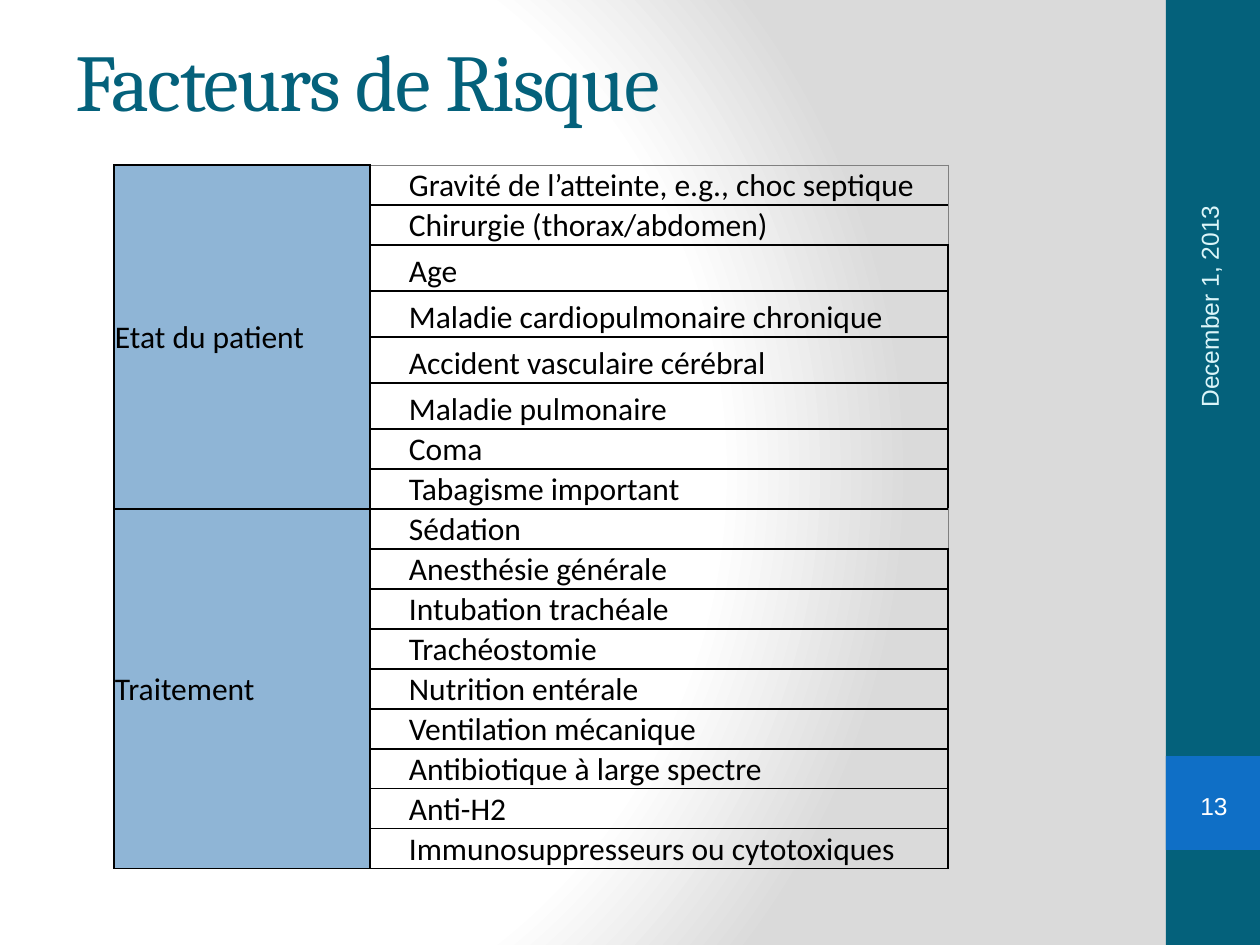
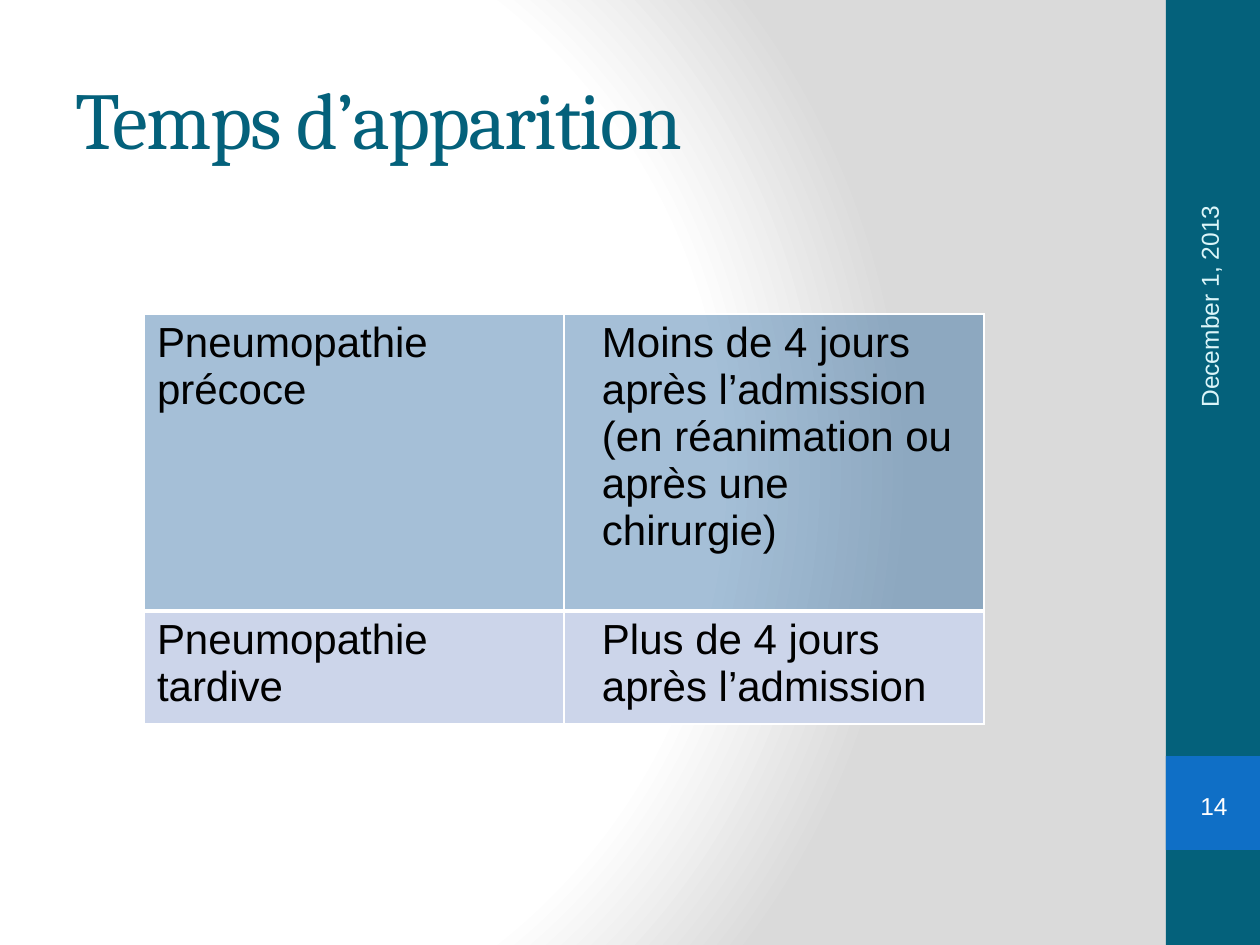
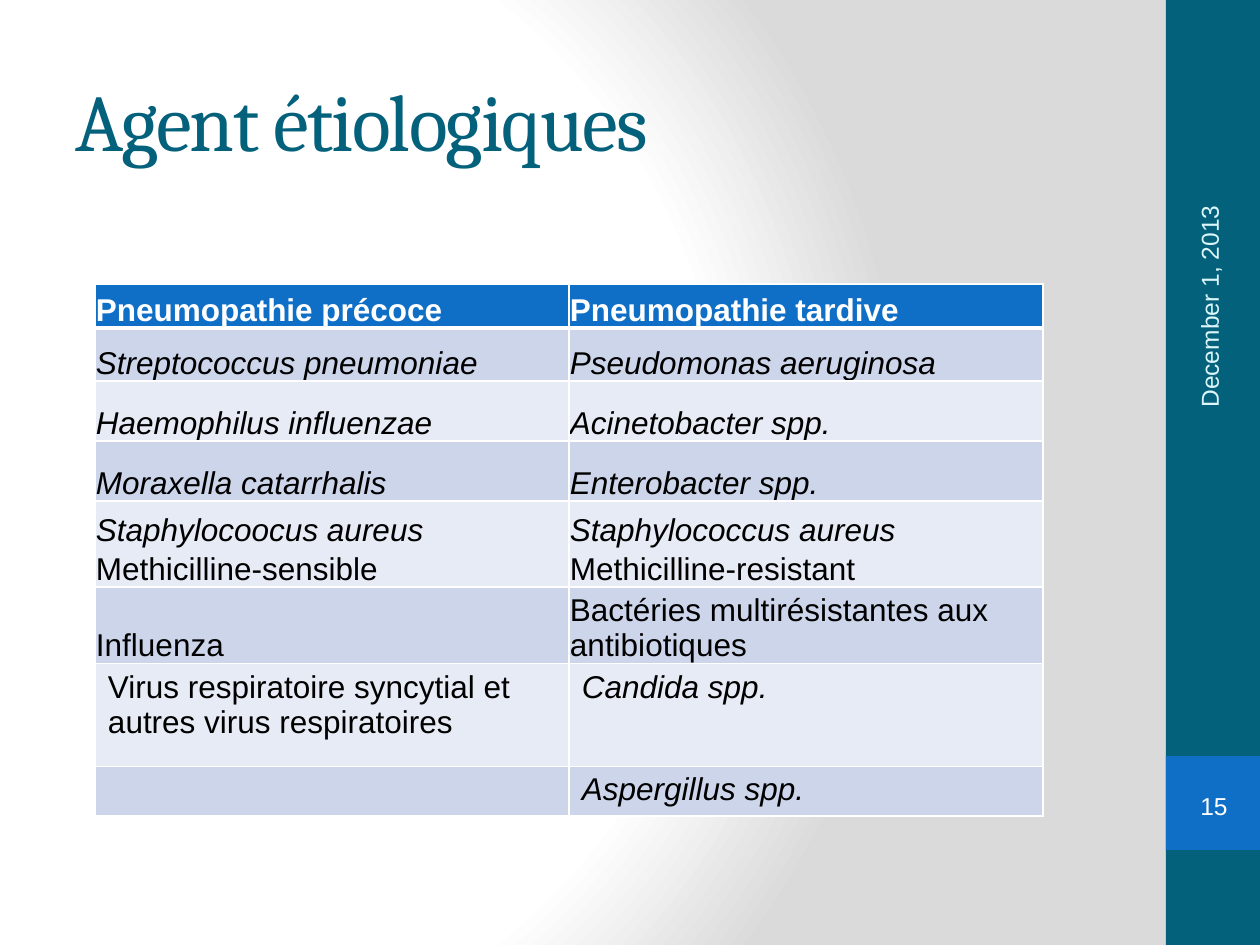
import pptx
import pptx.dml.color
import pptx.enum.shapes
import pptx.enum.text
import pptx.oxml
import pptx.oxml.ns
import pptx.util

PX = 914400 / 126
INK = {
    "teal": "04617B", "blue": "0F6FC6", "ice": "DBF5F9", "white": "FFFFFF",
    "black": "000000", "grey": "808080", "shade": "DADADA",
    "state": "0D5EA7", "early": "0B5394", "band": "CCD5EA", "pale": "E7EBF5",
}
DATE = "December 1, 2013"
SHAPE = pptx.enum.shapes.MSO_SHAPE
ANCHOR = pptx.enum.text.MSO_ANCHOR
ALIGN = pptx.enum.text.PP_ALIGN
Pt = pptx.util.Pt
qn = pptx.oxml.ns.qn
SPACE = pptx.oxml.ns.nsdecls("a")

FACTORS = {
    "Etat du patient": [
        "Gravité de l’atteinte, e.g., choc septique",
        "Chirurgie (thorax/abdomen)",
        "Age",
        "Maladie cardiopulmonaire chronique",
        "Accident vasculaire cérébral",
        "Maladie pulmonaire",
        "Coma",
        "Tabagisme important",
    ],
    "Traitement": [
        "Sédation",
        "Anesthésie générale",
        "Intubation trachéale",
        "Trachéostomie",
        "Nutrition entérale",
        "Ventilation mécanique",
        "Antibiotique à large spectre",
        "Anti-H2",
        "Immunosuppresseurs ou cytotoxiques",
    ],
}
ONSET = [
    ("Pneumopathie précoce",
     "Moins de 4 jours après l’admission (en réanimation ou après une chirurgie)"),
    ("Pneumopathie tardive", "Plus de 4 jours après l’admission"),
]
HEADS = ["Pneumopathie précoce", "Pneumopathie tardive"]
# Each cell is a list of (text, italic) lines.
AGENTS = [
    ([("Streptococcus pneumoniae", True)], [("Pseudomonas aeruginosa", True)]),
    ([("Haemophilus influenzae", True)], [("Acinetobacter spp.", True)]),
    ([("Moraxella catarrhalis", True)], [("Enterobacter spp.", True)]),
    ([("Staphylocoocus aureus", True), ("Methicilline-sensible", False)],
     [("Staphylococcus aureus", True), ("Methicilline-resistant", False)]),
    ([("Influenza", False)],
     [("Bactéries multirésistantes aux antibiotiques", False)]),
    ([("Virus respiratoire syncytial et autres virus respiratoires", False)],
     [("Candida spp.", True)]),
    ([], [("Aspergillus spp.", True)]),
]


def px(n):
    return pptx.util.Emu(round(n * PX))


def rgb(name):
    return pptx.dml.color.RGBColor.from_string(INK[name])


def style(run, size, ink, face="Arial", bold=False, slant=False):
    font = run.font
    font.size, font.name, font.bold, font.italic = Pt(size), face, bold, slant
    font.color.rgb = rgb(ink)


def write(frame, lines, size, ink, face="Arial", bold=False, after=0):
    """Fill a text frame with (text, italic) lines."""
    for i, (text, slant) in enumerate(lines):
        para = frame.add_paragraph() if i else frame.paragraphs[0]
        para.space_after = Pt(after)
        run = para.add_run()
        run.text = text
        style(run, size, ink, face, bold, slant)


def inset(area, left, top, right, base):
    area.margin_left, area.margin_top = px(left), px(top)
    area.margin_right, area.margin_bottom = px(right), px(base)


def back(master):
    """Set the round gradient behind every slide."""
    master.background.fill.solid()
    plain = master.element.find(".//" + qn("p:bgPr")).find(qn("a:solidFill"))
    stops = "".join(
        f'<a:gs pos="{at * 1000}"><a:srgbClr val="{INK[ink]}"/></a:gs>'
        for at, ink in ((0, "white"), (75, "white"), (100, "shade")))
    blend = pptx.oxml.parse_xml(
        f'<a:gradFill {SPACE} rotWithShape="1"><a:gsLst>{stops}</a:gsLst>'
        '<a:path path="circle"><a:fillToRect l="20000" t="50000" r="100000"'
        ' b="50000"/></a:path></a:gradFill>')
    plain.getparent().replace(plain, blend)


def block(slide, kind, box, ink=None):
    shape = slide.shapes.add_shape(kind, *map(px, box))
    shape.shadow.inherit = False
    shape.line.fill.background()
    if ink:
        shape.fill.solid()
        shape.fill.fore_color.rgb = rgb(ink)
    else:
        shape.fill.background()
    return shape


def side(slide, number, box):
    """Draw the right-hand band with the date and slide number."""
    left, top, width, height = box
    block(slide, SHAPE.RECTANGLE, box, "teal")
    block(slide, SHAPE.RECTANGLE, (left, top + 756, width, width), "blue")

    date = slide.shapes.add_textbox(*map(px, (left - 125, top + 227, 336, 50)))
    date.rotation = 270
    date.text_frame.word_wrap = True
    date.text_frame.vertical_anchor = ANCHOR.MIDDLE
    write(date.text_frame, [(DATE, False)], 14, "ice")

    mark = block(slide, SHAPE.DOUBLE_BRACKET, (left + 10, top + 779, 76, 54))
    mark.adjustments[0] = 0.18
    frame = mark.text_frame
    inset(frame, 0, 0, 0, 0)
    frame.vertical_anchor = ANCHOR.MIDDLE
    write(frame, [(str(number), False)], 14, "white")
    frame.paragraphs[0].alignment = ALIGN.CENTER


def head(slide, text, top):
    frame = slide.shapes.add_textbox(*map(px, (63, top, 1050, 158))).text_frame
    frame.word_wrap = True
    frame.vertical_anchor = ANCHOR.MIDDLE
    write(frame, [(text, False)], 46, "teal", "Cambria")
    frame.paragraphs[0].runs[0].font._element.set("spc", "-100")


def grid(slide, left, top, cols, rows):
    box = map(px, (left, top, sum(cols), sum(rows)))
    table = slide.shapes.add_table(len(rows), len(cols), *box).table
    table.first_row = table.horz_banding = False
    for col, width in zip(table.columns, cols):
        col.width = px(width)
    for row, height in zip(table.rows, rows):
        row.height = px(height)
    return table


def edge(cell, ink, **odd):
    """Draw 1 pt borders; odd maps a side (L, R, T, B) to (ink, width)."""
    props = cell._tc.get_or_add_tcPr()
    for key in "LRTB":
        tone, width = odd.get(key, (ink, 1))
        props.append(pptx.oxml.parse_xml(
            f'<a:ln{key} {SPACE} w="{Pt(width)}"><a:solidFill>'
            f'<a:srgbClr val="{INK[tone]}"/></a:solidFill></a:ln{key}>'))


def paint(cell, ink, alpha=100):
    cell.fill.solid()
    cell.fill.fore_color.rgb = rgb(ink)
    if alpha < 100:
        tone = cell._tc.tcPr.find(qn("a:solidFill")).find(qn("a:srgbClr"))
        tone.append(pptx.oxml.parse_xml(
            f'<a:alpha {SPACE} val="{alpha * 1000}"/>'))


def risks(slide, left, top):
    items = [(group, text) for group in FACTORS for text in FACTORS[group]]
    rows = [46 if 2 <= i <= 5 else 40 for i in range(len(items))]
    table = grid(slide, left, top, (256, 578), rows)
    thin = ("grey", 0.5)
    for i, (group, text) in enumerate(items):
        name, cell = table.cell(i, 0), table.cell(i, 1)
        edge(name, "black")
        paint(name, "state", 46)
        odd = {"R": thin} if i in (0, 1, 8) else {}
        if i == 0:
            odd["T"] = thin
        edge(cell, "black", **odd)
        cell.fill.background()
        inset(cell, 39, 1, 1, 0)
        cell.vertical_anchor = ANCHOR.BOTTOM
        write(cell.text_frame, [(text, False)], 18, "black", "Calibri")
    start = 0
    for group, texts in FACTORS.items():
        name = table.cell(start, 0)
        name.merge(table.cell(start + len(texts) - 1, 0))
        inset(name, 1, 1, 1, 0)
        name.vertical_anchor = ANCHOR.MIDDLE
        write(name.text_frame, [(group, False)], 18, "black", "Calibri")
        start += len(texts)


def onset(slide, left, top):
    table = grid(slide, left, top, (420, 420), (297, 107))
    for i, texts in enumerate(ONSET):
        for j, text in enumerate(texts):
            cell = table.cell(i, j)
            edge(cell, "white", **{"T" if i else "B": ("white", 3)})
            paint(cell, *(("band",) if i else ("early", 37)))
            inset(cell, 38 if j else 13, 6, 13, 6)
            write(cell.text_frame, [(text, False)], 24, "black")


def agents(slide, left, top):
    rows = (44, 53, 60, 60, 86, 74, 103, 47)
    table = grid(slide, left, top, (474, 474), rows)
    for j, text in enumerate(HEADS):
        cell = table.cell(0, j)
        edge(cell, "white", B=("white", 3))
        paint(cell, "blue")
        inset(cell, 1, 1, 1, 0)
        cell.vertical_anchor = ANCHOR.BOTTOM
        write(cell.text_frame, [(text, False)], 18, "white", bold=True)
    for i, pair in enumerate(AGENTS, 1):
        for j, lines in enumerate(pair):
            cell = table.cell(i, j)
            edge(cell, "white", **({"T": ("white", 3)} if i == 1 else {}))
            paint(cell, "band" if i % 2 else "pale")
            if i < 6:
                inset(cell, 1, 1, 1, 0)
                cell.vertical_anchor = ANCHOR.BOTTOM
            else:
                inset(cell, 13, 6, 13, 6)
            write(cell.text_frame, lines, 18, "black", after=2)


def main():
    deck = pptx.Presentation()
    deck.slide_width, deck.slide_height = px(1260), px(945)
    back(deck.slide_master)
    pages = [
        ("Facteurs de Risque", 0, risks, (114, 165)),
        ("Temps d’apparition", 38, onset, (144, 314)),
        ("Agent étiologiques", 40, agents, (95, 284)),
    ]
    for number, (title, top, body, spot) in enumerate(pages, 13):
        slide = deck.slides.add_slide(deck.slide_layouts[6])
        side(slide, number, (1166, 0, 94, 945))
        head(slide, title, top)
        body(slide, *spot)
    deck.save("out.pptx")


if __name__ == "__main__":
    main()
